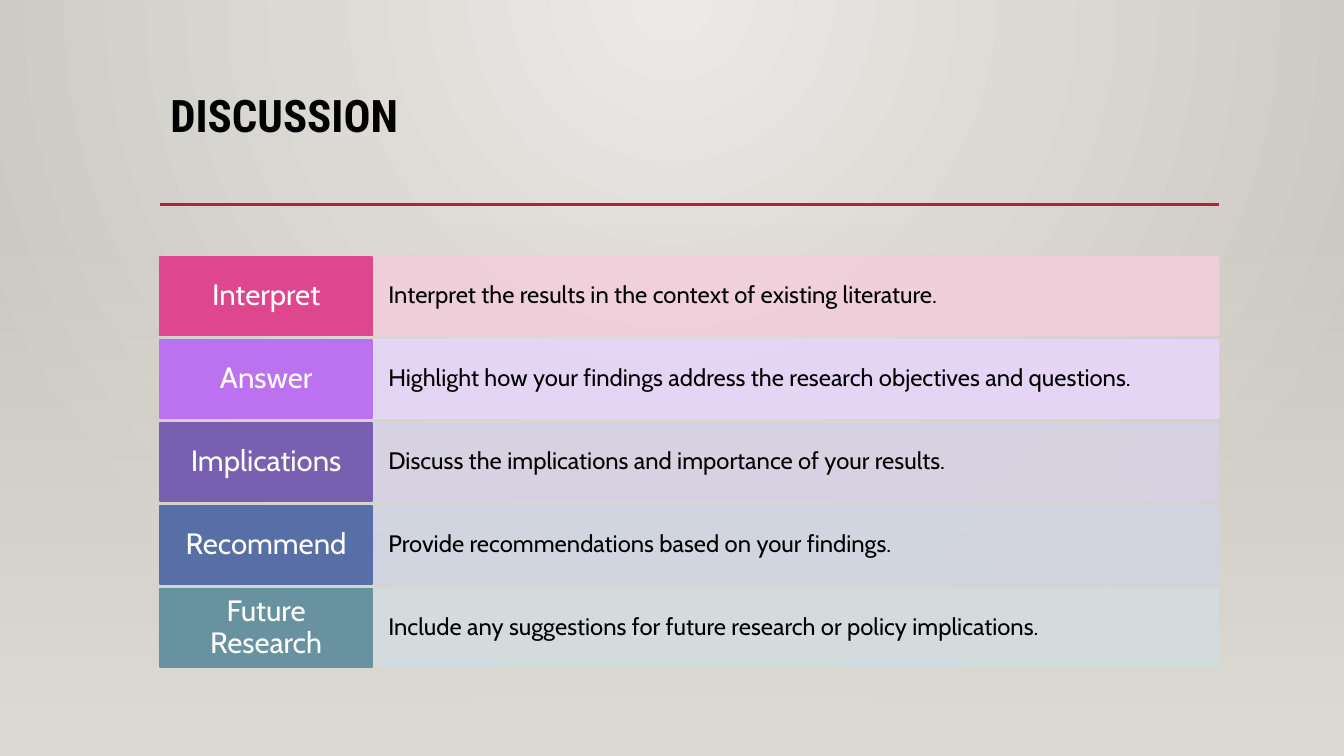
import pptx
import pptx.util
import pptx.dml.color
import pptx.enum.shapes
import pptx.enum.text
import pptx.oxml
import pptx.oxml.ns
from lxml import etree

Pt = pptx.util.Pt
RGBColor = pptx.dml.color.RGBColor
ALIGN = pptx.enum.text.PP_ALIGN
ANCHOR = pptx.enum.text.MSO_ANCHOR
qn = pptx.oxml.ns.qn

# Content: label, statement, label colour, statement colour
TITLE = "DISCUSSION"
ROWS = [
    ("Interpret", "Interpret the results in the context of existing literature.",
     RGBColor(0xDE, 0x47, 0x8E), RGBColor(0xF2, 0xCF, 0xDB)),
    ("Answer", "Highlight how your findings address the research objectives and questions.",
     RGBColor(0xBC, 0x72, 0xF0), RGBColor(0xE7, 0xD5, 0xF9)),
    ("Implications", "Discuss the implications and importance of your results.",
     RGBColor(0x79, 0x5F, 0xAF), RGBColor(0xD7, 0xD2, 0xE3)),
    ("Recommend", "Provide recommendations based on your findings.",
     RGBColor(0x58, 0x6E, 0xA6), RGBColor(0xD1, 0xD5, 0xE1)),
    ("Future Research", "Include any suggestions for future research or policy implications.",
     RGBColor(0x68, 0x92, 0xA0), RGBColor(0xD4, 0xDC, 0xDF)),
]

# Format
BLACK = RGBColor(0, 0, 0)
WHITE = RGBColor(0xFF, 0xFF, 0xFF)
CRIMSON = RGBColor(0xB7, 0x1E, 0x42)
SAND = RGBColor(0xDF, 0xDB, 0xD5)
GLOW = RGBColor(0xEC, 0xEA, 0xE7)
STONE = RGBColor(0xCA, 0xC7, 0xC1)
TITLE_FONT = {"name": "Roboto Condensed", "size": Pt(32), "bold": True}
LABEL_FONT = {"name": "Cabin", "size": Pt(21)}
BODY_FONT = {"name": "Cabin", "size": Pt(17)}

# Geometry in points
SLIDE_W, SLIDE_H = 960, 540
LEFT, LABEL_W, BODY_W = 114.5, 151.2, 604.8
ROWS_TOP, ROW_H, PITCH = 183.4, 56.2, 59.25
RULE_Y, VEIL_TOP = 146.1, 159


def set_alpha(color_parent, percent):
    for color in color_parent.iter(qn("a:srgbClr")):
        etree.SubElement(color, qn("a:alpha"), val=str(percent * 1000))


def set_gradient(fill, start, end):
    fill.gradient()
    for stop, color in zip(fill.gradient_stops, (start, end)):
        stop.color.rgb = color


def write(tf, text, font, color, align, anchor, insets):
    tf.word_wrap = True
    tf.auto_size = pptx.enum.text.MSO_AUTO_SIZE.NONE
    tf.vertical_anchor = anchor
    tf.margin_left = tf.margin_right = Pt(insets[0])
    tf.margin_top = tf.margin_bottom = Pt(insets[1])
    p = tf.paragraphs[0]
    p.alignment = align
    p.line_spacing = 0.9
    r = p.add_run()
    r.text = text
    for name, value in font.items():
        setattr(r.font, name, value)
    r.font.color.rgb = color


def add_rect(s, x, y, w, h):
    sp = s.shapes.add_shape(pptx.enum.shapes.MSO_SHAPE.RECTANGLE,
                            Pt(x), Pt(y), Pt(w), Pt(h))
    sp.shadow.inherit = False
    return sp


def add_tile(s, x, y, w, color):
    sp = add_rect(s, x, y, w, ROW_H)
    sp.fill.solid()
    sp.fill.fore_color.rgb = color
    sp.line.color.rgb = color
    sp.line.width = Pt(1.25)
    return sp


def main():
    prs = pptx.Presentation()
    prs.slide_width, prs.slide_height = Pt(SLIDE_W), Pt(SLIDE_H)
    s = prs.slides.add_slide(prs.slide_layouts[5])

    # Background: glow spreading from the top centre
    set_gradient(s.background.fill, GLOW, STONE)
    lin = next(s.element.iter(qn("a:lin")))
    glow = etree.Element(qn("a:path"))
    glow.set("path", "circle")
    etree.SubElement(glow, qn("a:fillToRect"), l="43000", t="0", r="43000", b="100000")
    lin.getparent().replace(lin, glow)

    # Veil fading in towards the bottom
    veil = add_rect(s, 0, VEIL_TOP, SLIDE_W, SLIDE_H - VEIL_TOP)
    set_gradient(veil.fill, SAND, SAND)
    veil.fill.gradient_angle = 270
    set_alpha(next(veil.element.iter(qn("a:gs"))), 0)
    veil.line.fill.background()

    # Title and rule
    title = s.shapes.title
    title.left, title.top, title.width, title.height = Pt(LEFT), Pt(63.4), Pt(756), Pt(82.8)
    write(title.text_frame, TITLE, TITLE_FONT, BLACK, ALIGN.LEFT, ANCHOR.TOP, (7.2, 3.6))
    rule = s.shapes.add_connector(pptx.enum.shapes.MSO_CONNECTOR.STRAIGHT, Pt(LEFT),
                                  Pt(RULE_Y), Pt(LEFT + LABEL_W + BODY_W), Pt(RULE_Y))
    rule.line.color.rgb = CRIMSON
    rule.line.width = Pt(2.5)
    etree.SubElement(rule.element.spPr, qn("a:effectLst"))

    # Rows: statement tile and label tile
    for i, (label, statement, strong, pale) in enumerate(ROWS):
        y = ROWS_TOP + i * PITCH
        body = add_tile(s, LEFT + LABEL_W, y, BODY_W, pale)
        set_alpha(body.element.spPr, 90)
        write(body.text_frame, statement, BODY_FONT, BLACK, ALIGN.LEFT, ANCHOR.MIDDLE, (11.7, 14.3))
        tile = add_tile(s, LEFT, y, LABEL_W, strong)
        write(tile.text_frame, label, LABEL_FONT, WHITE, ALIGN.CENTER, ANCHOR.MIDDLE, (8, 5.6))

    prs.save("out.pptx")


if __name__ == "__main__":
    main()
